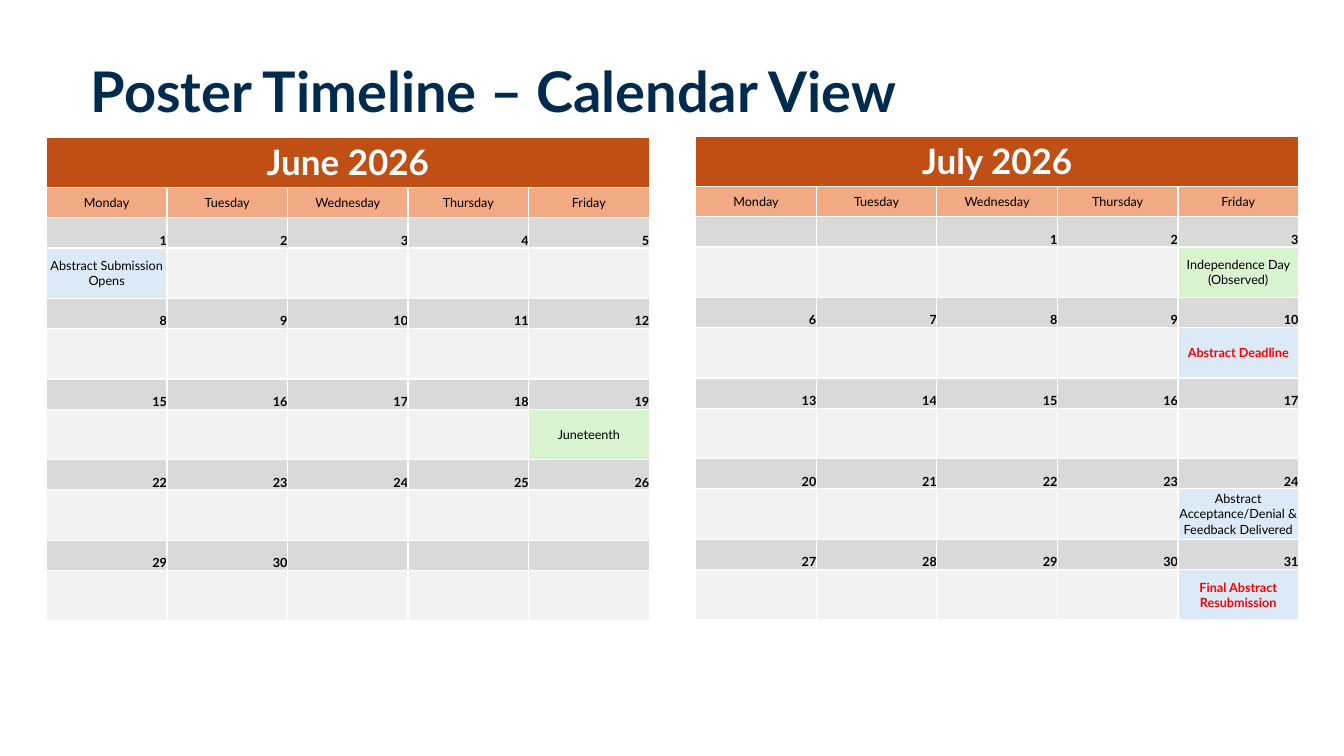
import pptx
import pptx.util
import pptx.dml.color
import pptx.enum.text
import pptx.oxml.ns
import lxml.etree

Inches = pptx.util.Inches
Pt = pptx.util.Pt
qn = pptx.oxml.ns.qn
ALIGN = pptx.enum.text.PP_ALIGN
ANCHOR = pptx.enum.text.MSO_ANCHOR

COLORS = {
    "navy": "002B4E", "white": "FFFFFF", "black": "000000", "red": "FF0000",
    "month": "C04F15", "weekday": "F2AA84", "date": "D9D9D9", "empty": "F2F2F2",
    "abstract": "DCEAF7", "holiday": "D9F2D0",
}
WEEKDAYS = ["Monday", "Tuesday", "Wednesday", "Thursday", "Friday"]
WEEKS = 5

JUNE = {
    "name": "June 2026", "offset": 0, "days": 30,
    "events": {
        1: ("Abstract Submission Opens", "abstract", False),
        19: ("Juneteenth", "holiday", False),
    },
}
JULY = {
    "name": "July 2026", "offset": 2, "days": 31,
    "events": {
        3: ("Independence Day (Observed)", "holiday", False),
        10: ("Abstract Deadline", "abstract", True),
        24: ("Abstract Acceptance/Denial & Feedback Delivered", "abstract", False),
        31: ("Final Abstract Resubmission", "abstract", True),
    },
}


def rgb(name):
    return pptx.dml.color.RGBColor.from_string(COLORS[name])


def set_attrs(obj, values):
    for name, value in values.items():
        setattr(obj, name, value)


def add_text(p, text, size, color, bold):
    r = p.add_run()
    r.text = text
    set_attrs(r.font, {"name": "Lato", "size": Pt(size), "bold": bold})
    r.font.color.rgb = rgb(color)


def add_borders(cell):
    tcPr = cell._tc.get_or_add_tcPr()
    for side in ("lnL", "lnR", "lnT", "lnB"):
        ln = lxml.etree.SubElement(tcPr, qn("a:" + side), w=str(Pt(1)))
        fill = lxml.etree.SubElement(ln, qn("a:solidFill"))
        lxml.etree.SubElement(fill, qn("a:srgbClr"), val=COLORS["white"])


def fill_cell(cell, fill, text="", size=9, color="black", bold=False,
              align=ALIGN.CENTER, anchor=ANCHOR.MIDDLE):
    set_attrs(cell, {
        "margin_left": 0, "margin_right": 0, "margin_top": 0,
        "margin_bottom": 0, "vertical_anchor": anchor,
    })
    add_borders(cell)
    cell.fill.solid()
    cell.fill.fore_color.rgb = rgb(fill)
    p = cell.text_frame.paragraphs[0]
    p.alignment = align
    if text:
        add_text(p, text, size, color, bold)
    else:
        lxml.etree.SubElement(p._p, qn("a:endParaRPr"), sz=str(size * 100))


def add_title(s, text, left, top, width, height):
    sp = s.shapes.title
    set_attrs(sp, {"left": Inches(left), "top": Inches(top),
                   "width": Inches(width), "height": Inches(height)})
    tf = sp.text_frame
    set_attrs(tf, {"word_wrap": True, "vertical_anchor": ANCHOR.TOP,
                   "auto_size": pptx.enum.text.MSO_AUTO_SIZE.NONE})
    p = tf.paragraphs[0]
    set_attrs(p, {"alignment": ALIGN.LEFT, "line_spacing": 0.9})
    add_text(p, text, 40, "navy", True)


def add_month(s, month, left, top, width, height):
    heights = [0.5, 0.3] + [0.3, 0.5] * WEEKS
    columns = len(WEEKDAYS)
    table = s.shapes.add_table(len(heights), columns, Inches(left), Inches(top),
                               Inches(width), Inches(height)).table
    set_attrs(table, {"first_row": False, "horz_banding": False})
    for row, row_height in zip(table.rows, heights):
        row.height = Inches(row_height * height / sum(heights))

    for col in range(columns):
        fill_cell(table.cell(0, col), "month", "" if col else month["name"],
                  25, "white", True)
        fill_cell(table.cell(1, col), "weekday", WEEKDAYS[col])
    table.cell(0, 0).merge(table.cell(0, columns - 1))

    for week in range(WEEKS):
        for col in range(columns):
            day = week * 7 + col + 1 - month["offset"]
            label = str(day) if 1 <= day <= month["days"] else ""
            text, fill, urgent = month["events"].get(day, ("", "empty", False))
            fill_cell(table.cell(2 + 2 * week, col), "date", label, bold=True,
                      align=ALIGN.RIGHT, anchor=ANCHOR.BOTTOM)
            fill_cell(table.cell(3 + 2 * week, col), fill, text,
                      color="red" if urgent else "black", bold=urgent)


def main():
    prs = pptx.Presentation()
    set_attrs(prs, {"slide_width": Inches(13.33), "slide_height": Inches(7.5)})
    s = prs.slides.add_slide(prs.slide_layouts[5])
    add_title(s, "Poster Timeline – Calendar View", 0.8, 0.59, 11.73, 0.76)
    add_month(s, JULY, 6.9, 1.35, 5.98, 4.8)
    add_month(s, JUNE, 0.46, 1.36, 5.98, 4.8)
    prs.save("out.pptx")


if __name__ == "__main__":
    main()
